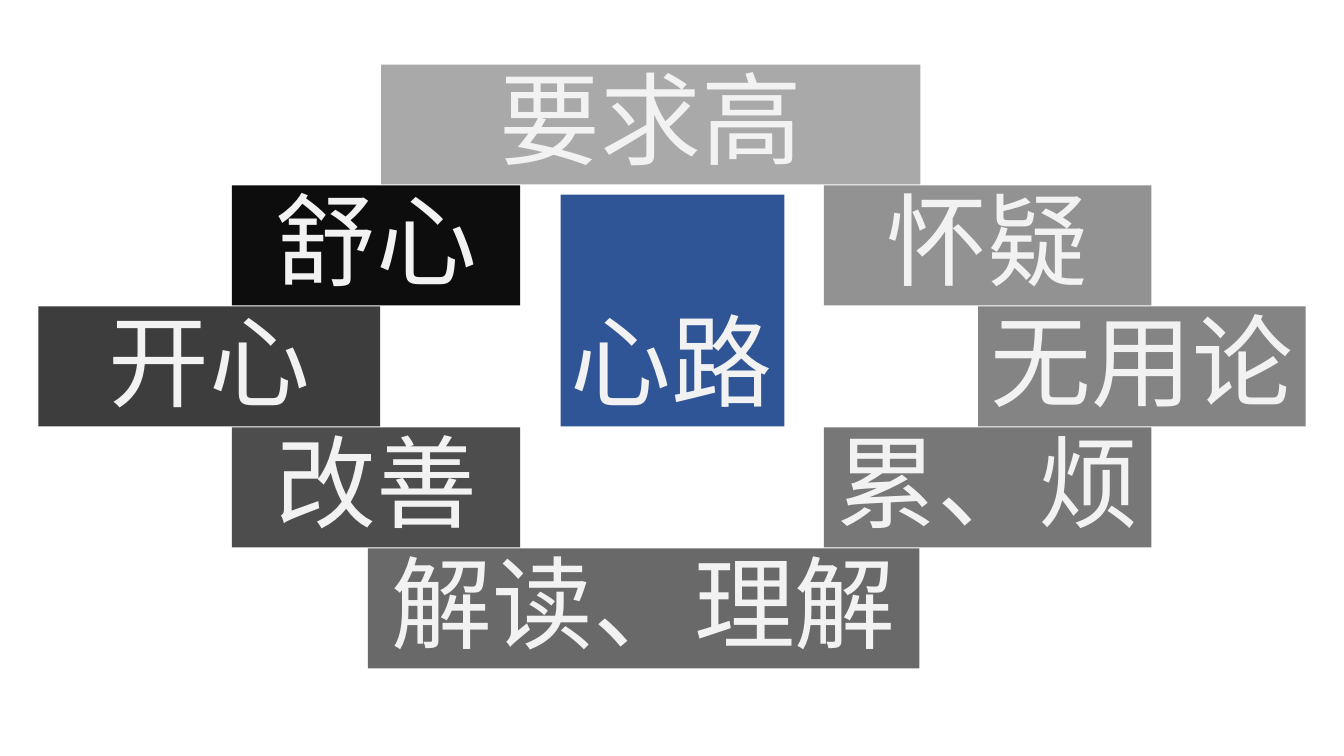
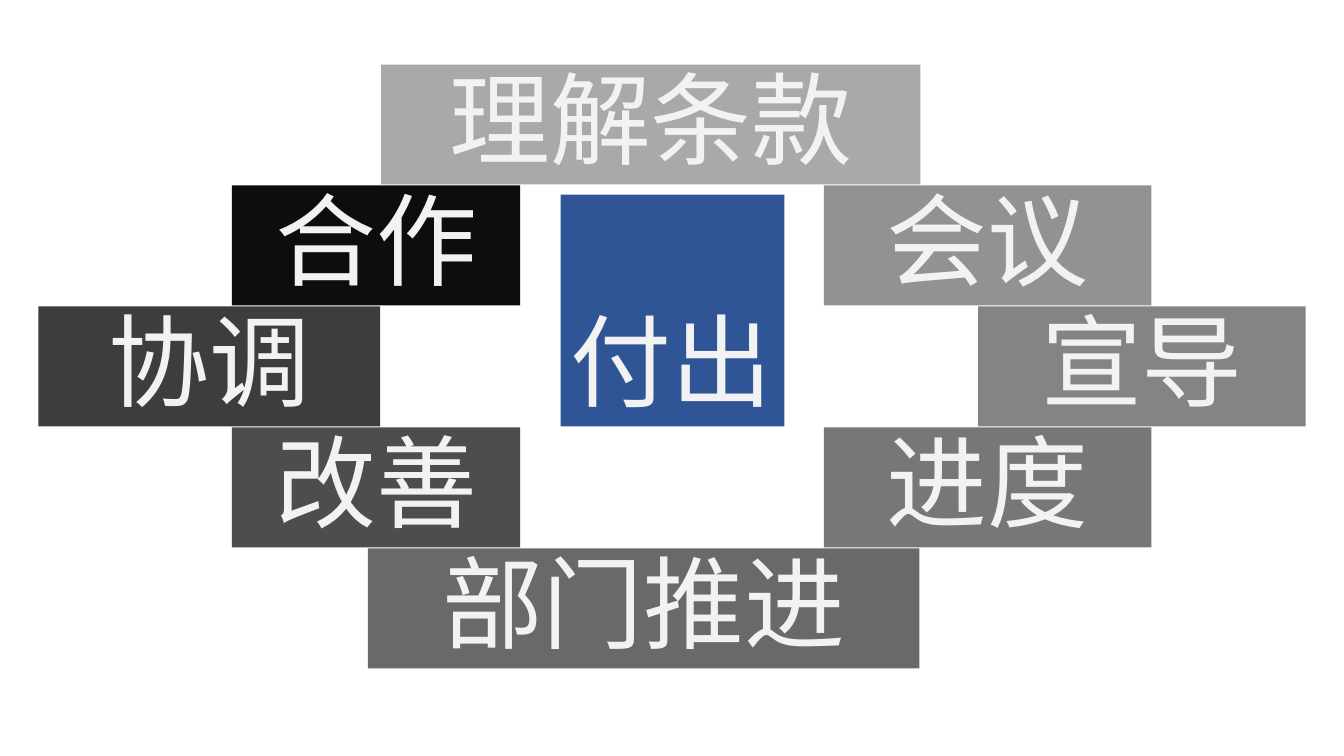
"""Build two slides that each ring a central theme with eight labelled stages."""
from pptx import Presentation
from pptx.dml.color import RGBColor
from pptx.enum.shapes import MSO_SHAPE
from pptx.enum.text import MSO_ANCHOR, MSO_AUTO_SIZE, PP_ALIGN
from pptx.util import Inches, Pt

THEME_BLUE = RGBColor(0x2F, 0x55, 0x97)
TEXT_WHITE = RGBColor(0xF2, 0xF2, 0xF2)
FONT = "Calibri"
BOX_HEIGHT = 1.19
ROW_TOP, ROW_STEP = 0.64, 1.2
THEME_BOX = (2, 5.56, 2.22)

# Each stage, clockwise from the top: row, left, width, fill.
STAGES = [
    (0, 3.78, 5.35, RGBColor(0xA9, 0xA9, 0xA9)),
    (1, 8.17, 3.25, RGBColor(0x92, 0x92, 0x92)),
    (2, 9.7, 3.25, RGBColor(0x84, 0x84, 0x84)),
    (3, 8.17, 3.25, RGBColor(0x77, 0x77, 0x77)),
    (4, 3.65, 5.47, RGBColor(0x69, 0x69, 0x69)),
    (3, 2.3, 2.86, RGBColor(0x4D, 0x4D, 0x4D)),
    (2, 0.38, 3.39, RGBColor(0x3D, 0x3D, 0x3D)),
    (1, 2.3, 2.86, RGBColor(0x0D, 0x0D, 0x0D)),
]

RINGS = [
    ("心路", ["要求高", "怀疑", "无用论", "累、烦", "解读、理解", "改善", "开心", "舒心"]),
    ("付出", ["理解条款", "会议", "宣导", "进度", "部门推进", "改善", "协调", "合作"]),
]


def box_frame(row, left, width):
    """Return left, top, width and height of a box in the given row."""
    top = ROW_TOP + row * ROW_STEP
    return [Inches(n) for n in (left, top, width, BOX_HEIGHT)]


def style_box(sp, text, fill, align):
    """Fill a box and set its label in the shared style."""
    sp.fill.solid()
    sp.fill.fore_color.rgb = fill
    sp.line.fill.background()
    tf = sp.text_frame
    tf.text = text
    tf.word_wrap = True
    tf.auto_size = MSO_AUTO_SIZE.SHAPE_TO_FIT_TEXT
    tf.vertical_anchor = MSO_ANCHOR.BOTTOM
    p = tf.paragraphs[0]
    p.alignment = align
    p.line_spacing = 0.9
    p.font.name = FONT
    p.font.size = Pt(72)
    p.font.color.rgb = TEXT_WHITE


def add_theme(s, text):
    """Place the title as the central box."""
    sp = s.shapes.title
    sp.left, sp.top, sp.width, sp.height = box_frame(*THEME_BOX)
    style_box(sp, text, THEME_BLUE, PP_ALIGN.LEFT)


def add_stage(s, text, row, left, width, fill):
    """Add one box of the ring."""
    sp = s.shapes.add_shape(MSO_SHAPE.RECTANGLE, *box_frame(row, left, width))
    sp.shadow.inherit = False
    style_box(sp, text, fill, PP_ALIGN.CENTER)


def main():
    """Build and save the presentation."""
    prs = Presentation()
    prs.slide_width, prs.slide_height = Inches(13.33), Inches(7.5)
    for theme, labels in RINGS:
        s = prs.slides.add_slide(prs.slide_layouts[5])
        add_theme(s, theme)
        for text, stage in zip(labels, STAGES):
            add_stage(s, text, *stage)
    prs.save("out.pptx")


if __name__ == "__main__":
    main()
